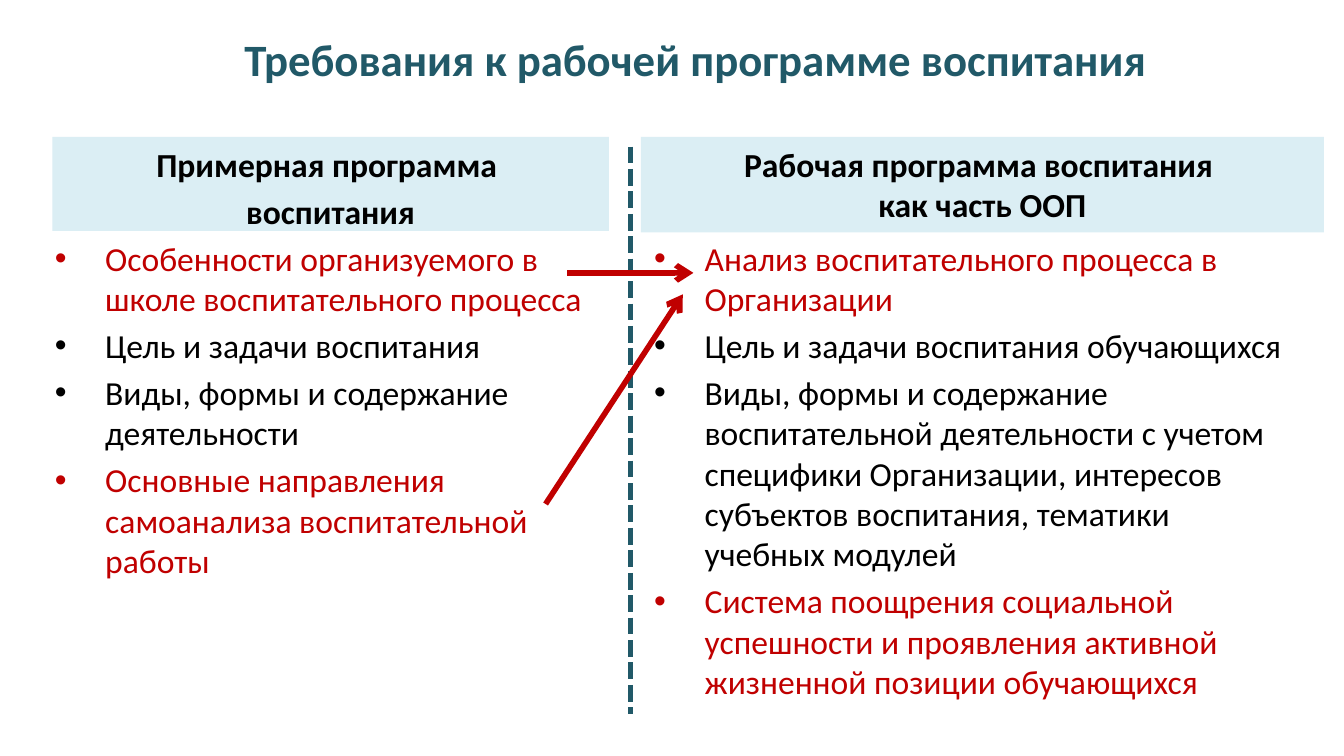
"""Build a slide comparing the model and working education programmes."""
from lxml.etree import SubElement
from pptx import Presentation
from pptx.dml.color import RGBColor
from pptx.enum.dml import MSO_LINE
from pptx.enum.shapes import MSO_CONNECTOR, MSO_SHAPE
from pptx.enum.text import MSO_ANCHOR, PP_ALIGN
from pptx.oxml.ns import qn
from pptx.util import Pt

COLORS = {"teal": "215968", "pale": "DBEEF4", "red": "C00000", "black": "000000"}
FONT = "Calibri"
BODY_SIZE = 18
BULLET_GAP = 3.6
BULLET_INDENT = 27
BODY_TOP = 123.8
HEADER_TOP = 73.4

MODEL_ITEMS = [
    ("Особенности организуемого в школе воспитательного процесса", "red"),
    ("Цель и задачи воспитания", "black"),
    ("Виды, формы и содержание деятельности", "black"),
    ("Основные направления самоанализа воспитательной работы", "red"),
]
WORKING_ITEMS = [
    ("Анализ воспитательного процесса в Организации", "red"),
    ("Цель и задачи воспитания обучающихся", "black"),
    ("Виды, формы и содержание воспитательной деятельности с учетом специфики "
     "Организации, интересов субъектов воспитания, тематики учебных модулей", "black"),
    ("Система поощрения социальной успешности и проявления активной "
     "жизненной позиции обучающихся", "red"),
]


def rgb(name):
    return RGBColor.from_string(COLORS[name])


def add_run(p, text, color, size=BODY_SIZE, bold=False):
    r = p.add_run()
    r.text = text
    r.font.name = FONT
    r.font.size = Pt(size)
    r.font.bold = bold
    r.font.color.rgb = rgb(color)


def add_paragraph(tf, index, gap=0):
    p = tf.add_paragraph() if index else tf.paragraphs[0]
    p.space_before = Pt(gap if index else 0)
    return p


def add_text_box(s, left, top, width, height):
    tf = s.shapes.add_textbox(Pt(left), Pt(top), Pt(width), Pt(height)).text_frame
    tf.word_wrap = True
    return tf


def add_title(s, text):
    tf = add_text_box(s, 123.8, 11.5, 562.3, 39.6)
    tf.vertical_anchor = MSO_ANCHOR.MIDDLE
    add_run(tf.paragraphs[0], text, "teal", 24, True)


def add_header(s, left, width, height, lines, gap=0):
    sp = s.shapes.add_shape(MSO_SHAPE.RECTANGLE, Pt(left), Pt(HEADER_TOP), Pt(width), Pt(height))
    sp.shadow.inherit = False
    sp.fill.solid()
    sp.fill.fore_color.rgb = rgb("pale")
    sp.line.fill.background()
    tf = sp.text_frame
    tf.word_wrap = True
    tf.vertical_anchor = MSO_ANCHOR.TOP
    for i, line in enumerate(lines):
        p = add_paragraph(tf, i, gap)
        p.alignment = PP_ALIGN.CENTER
        add_run(p, line, "black", bold=True)


def add_bullets(s, left, width, height, items):
    tf = add_text_box(s, left, BODY_TOP, width, height)
    for i, (text, color) in enumerate(items):
        p = add_paragraph(tf, i, BULLET_GAP)
        pPr = p._p.get_or_add_pPr()
        pPr.set("marL", str(Pt(BULLET_INDENT)))
        pPr.set("indent", str(-Pt(BULLET_INDENT)))
        SubElement(pPr, qn("a:buFont"), typeface="Arial")
        SubElement(pPr, qn("a:buChar"), char="•")
        add_run(p, text, color)


def add_line(s, start, end, color, dash=None, arrow=False):
    x1, y1, x2, y2 = map(Pt, (*start, *end))
    line = s.shapes.add_connector(MSO_CONNECTOR.STRAIGHT, x1, y1, x2, y2)
    line.line.color.rgb = rgb(color)
    line.line.width = Pt(3)
    if dash:
        line.line.dash_style = dash
    if arrow:
        SubElement(line.line._get_or_add_ln(), qn("a:tailEnd"), type="arrow")
    SubElement(line._element.spPr, qn("a:effectLst"))


def main():
    prs = Presentation()
    prs.slide_width, prs.slide_height = Pt(720), Pt(405)
    s = prs.slides.add_slide(prs.slide_layouts[6])
    add_title(s, "Требования к рабочей программе воспитания")
    add_header(s, 28.1, 298.1, 50.4, ["Примерная программа ", "воспитания"], BULLET_GAP)
    add_bullets(s, 22.3, 298.1, 233.3, MODEL_ITEMS)
    add_header(s, 343.4, 365.8, 51.1, ["Рабочая программа воспитания ", "как часть ООП"])
    add_bullets(s, 343.4, 354.2, 264.2, WORKING_ITEMS)
    add_line(s, (337.7, 78.5), (337.7, 382.3), "teal", dash=MSO_LINE.SQUARE_DOT)
    add_line(s, (303.8, 146.2), (371.5, 146.2), "red", arrow=True)
    add_line(s, (292.3, 270), (365.8, 157.7), "red", arrow=True)
    prs.save("out.pptx")


if __name__ == "__main__":
    main()
